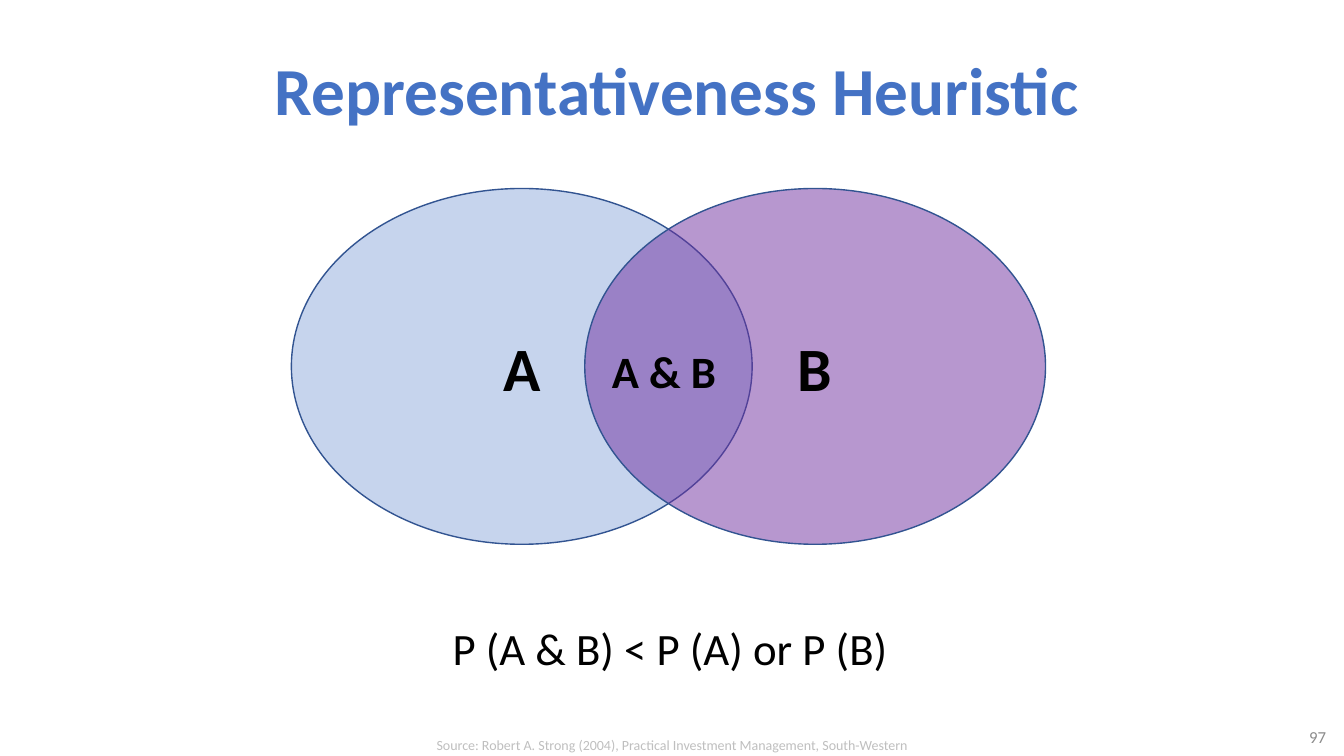
from lxml.etree import SubElement
from pptx import Presentation
from pptx.dml.color import RGBColor
from pptx.enum.shapes import MSO_SHAPE
from pptx.enum.text import MSO_ANCHOR, PP_ALIGN
from pptx.oxml.ns import qn
from pptx.util import Inches, Pt

TITLE_BLUE = RGBColor(0x44, 0x72, 0xC4)
SET_A_BLUE = RGBColor(0x8F, 0xAA, 0xDC)
SET_B_PURPLE = RGBColor(0x70, 0x30, 0xA0)
OUTLINE_BLUE = RGBColor(0x32, 0x54, 0x91)
NUMBER_GREY = RGBColor(0x8C, 0x8C, 0x8C)
SOURCE_GREY = RGBColor(0xBF, 0xBF, 0xBF)
BLACK = RGBColor(0, 0, 0)


class SlideBuilder:
    font_name = "Calibri"

    def __init__(self, deck):
        self.slide = deck.slides.add_slide(deck.slide_layouts[5])

    def add_text(self, shape, text, size, color, bold=False,
                 align=PP_ALIGN.CENTER, anchor=MSO_ANCHOR.MIDDLE, wrap=True):
        frame = shape.text_frame
        frame.word_wrap = wrap
        frame.vertical_anchor = anchor
        para = frame.paragraphs[0]
        para.alignment = align
        span = para.add_run()
        span.text = text
        span.font.name = self.font_name
        span.font.size = Pt(size)
        span.font.bold = bold
        span.font.color.rgb = color

    def title(self, text, left, top, width, height):
        title = self.slide.shapes.title
        title.left, title.top = Inches(left), Inches(top)
        title.width, title.height = Inches(width), Inches(height)
        self.add_text(title, text, 48, TITLE_BLUE, bold=True)

    def label(self, text, left, top, width, height, size, color, **style):
        box = self.slide.shapes.add_textbox(
            Inches(left), Inches(top), Inches(width), Inches(height))
        self.add_text(box, text, size, color, **style)

    def venn_set(self, name, left, top, width, height, color):
        """Draw one half-transparent set of the Venn diagram."""
        ellipse = self.slide.shapes.add_shape(
            MSO_SHAPE.OVAL, Inches(left), Inches(top), Inches(width), Inches(height))
        ellipse.shadow.inherit = False
        ellipse.fill.solid()
        ellipse.fill.fore_color.rgb = color
        fill_color = ellipse.element.spPr.find(qn("a:solidFill"))[0]
        SubElement(fill_color, qn("a:alpha")).set("val", "50000")
        ellipse.line.color.rgb = OUTLINE_BLUE
        ellipse.line.width = Pt(1)
        self.add_text(ellipse, name, 44, BLACK, bold=True)


def main():
    deck = Presentation()
    deck.slide_width, deck.slide_height = Inches(13.33), Inches(7.5)

    page = SlideBuilder(deck)
    page.title("Representativeness Heuristic", 0.58, 0.15, 12.27, 1.45)
    page.label("97", 12.2, 7.18, 1.05, 0.26, 12, NUMBER_GREY, align=PP_ALIGN.RIGHT)
    page.label("Source: Robert A. Strong (2004), Practical Investment Management, South-Western",
               3.45, 7.26, 6.43, 0.27, 10, SOURCE_GREY, anchor=MSO_ANCHOR.TOP)

    for name, left, color in (("A", 2.89, SET_A_BLUE), ("B", 5.8, SET_B_PURPLE)):
        page.venn_set(name, left, 1.87, 4.57, 3.53, color)

    unwrapped = {"align": PP_ALIGN.LEFT, "anchor": MSO_ANCHOR.TOP, "wrap": False}
    page.label("P (A & B) < P (A) or P (B)", 4.39, 6.11, 4.56, 0.64, 32, BLACK, **unwrapped)
    page.label("A & B", 5.97, 3.36, 1.25, 0.64, 32, BLACK, bold=True, **unwrapped)

    deck.save("out.pptx")


if __name__ == "__main__":
    main()
